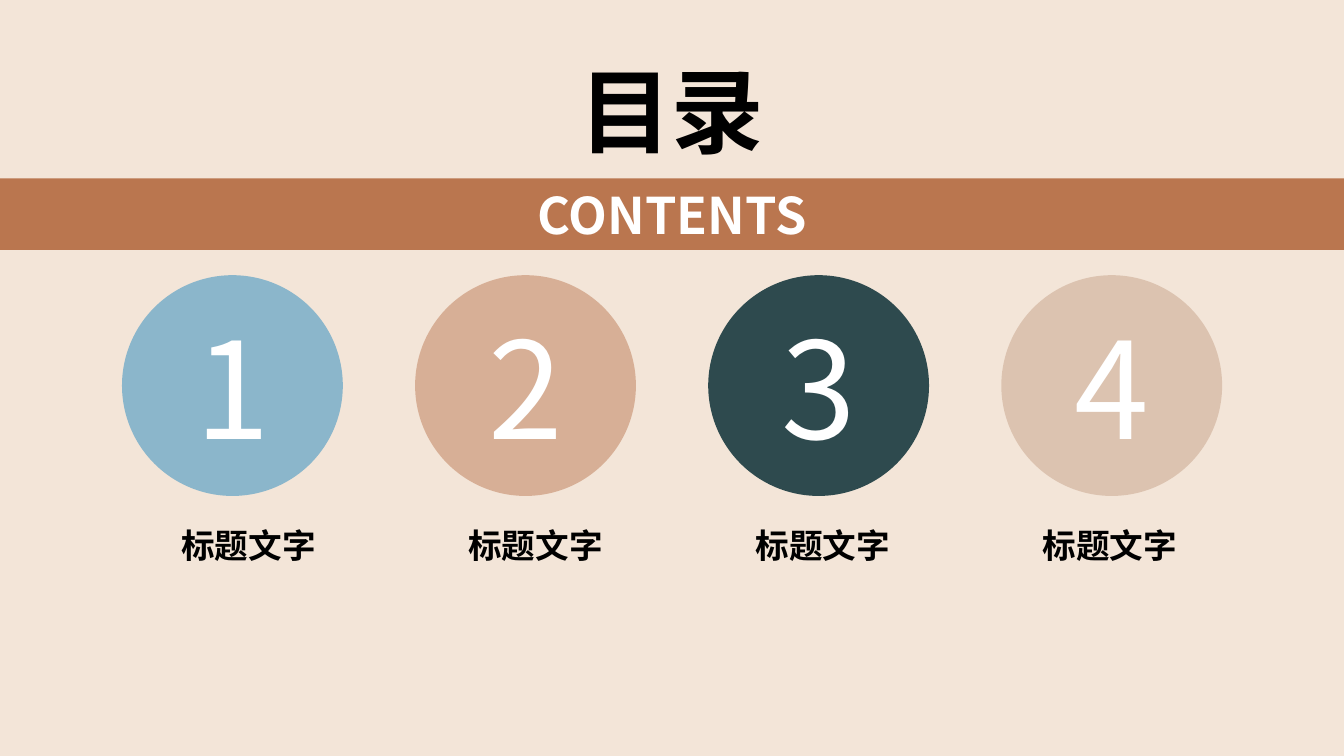
"""Build a contents slide with four numbered circles and their headings."""
from lxml.etree import SubElement
from pptx import Presentation
from pptx.dml.color import RGBColor
from pptx.enum.shapes import MSO_SHAPE as Shape
from pptx.enum.text import MSO_ANCHOR as Anchor, PP_ALIGN as Align
from pptx.oxml.ns import qn
from pptx.util import Inches, Pt

FONT = "Noto Sans CJK SC"
BACKGROUND, BAND, WHITE, BLACK = "F3E5D8", "BA764F", "FFFFFF", "000000"
TITLE, SUBTITLE = "目录", "CONTENTS"
SECTIONS = [
    ("1", "标题文字", "8BB6CB", 100),
    ("2", "标题文字", BAND, 48),
    ("3", "标题文字", "2E4A4E", 100),
    ("4", "标题文字", "C5A086", 48),
]
STYLES = {
    "title": {"size": Pt(66), "bold": True, "color": BLACK, "align": Align.CENTER},
    "band": {"size": Pt(36), "bold": True, "color": WHITE, "align": Align.CENTER},
    "number": {"size": Pt(96), "bold": False, "color": WHITE, "align": Align.CENTER},
    "heading": {"size": Pt(24), "bold": True, "color": BLACK, "align": Align.LEFT},
}
CIRCLE_LEFT, CIRCLE_TOP, CIRCLE_SIZE, CIRCLE_STEP = 1.21, 2.73, 2.19, 2.907
HEADING_LEFT, HEADING_TOP, HEADING_STEP = 1.7, 5.16, 2.847


def paint(fill, color, opacity=100):
    fill.solid()
    fill.fore_color.rgb = RGBColor.from_string(color)
    if opacity < 100:
        tint = fill.fore_color._xFill.find(qn("a:srgbClr"))
        SubElement(tint, qn("a:alpha"), val=str(opacity * 1000))


def write(box, text, style, wrap=True):
    frame = box.text_frame
    frame.word_wrap = wrap
    frame.vertical_anchor = Anchor.MIDDLE
    para = frame.paragraphs[0]
    para.alignment = STYLES[style]["align"]
    span = para.add_run()
    span.text = text
    for name in ("size", "bold"):
        setattr(span.font, name, STYLES[style][name])
    paint(span.font.fill, STYLES[style]["color"])
    span.font.name = FONT
    SubElement(span.font._element, qn("a:ea"), typeface=FONT)


def add_text(page, bounds, text, style, wrap=True):
    box = page.shapes.add_textbox(*map(Inches, bounds))
    write(box, text, style, wrap)


def add_filled(page, kind, bounds, color, text, style, opacity=100):
    shape = page.shapes.add_shape(kind, *map(Inches, bounds))
    shape.shadow.inherit = False
    shape.line.fill.background()
    paint(shape.fill, color, opacity)
    write(shape, text, style)


def main():
    deck = Presentation()
    deck.slide_width, deck.slide_height = Inches(13.33), Inches(7.5)
    page = deck.slides.add_slide(deck.slide_layouts[6])
    paint(page.background.fill, BACKGROUND)
    add_text(page, (5.21, 0.48, 2.91, 1.21), TITLE, "title")
    add_filled(page, Shape.RECTANGLE, (0, 1.77, 13.33, 0.71), BAND, SUBTITLE, "band")
    for index, (number, heading, color, opacity) in enumerate(SECTIONS):
        circle = (CIRCLE_LEFT + index * CIRCLE_STEP, CIRCLE_TOP, CIRCLE_SIZE, CIRCLE_SIZE)
        add_filled(page, Shape.OVAL, circle, color, number, "number", opacity)
        label = (HEADING_LEFT + index * HEADING_STEP, HEADING_TOP, 1.55, 0.5)
        add_text(page, label, heading, "heading", wrap=False)
    deck.save("out.pptx")


if __name__ == "__main__":
    main()
